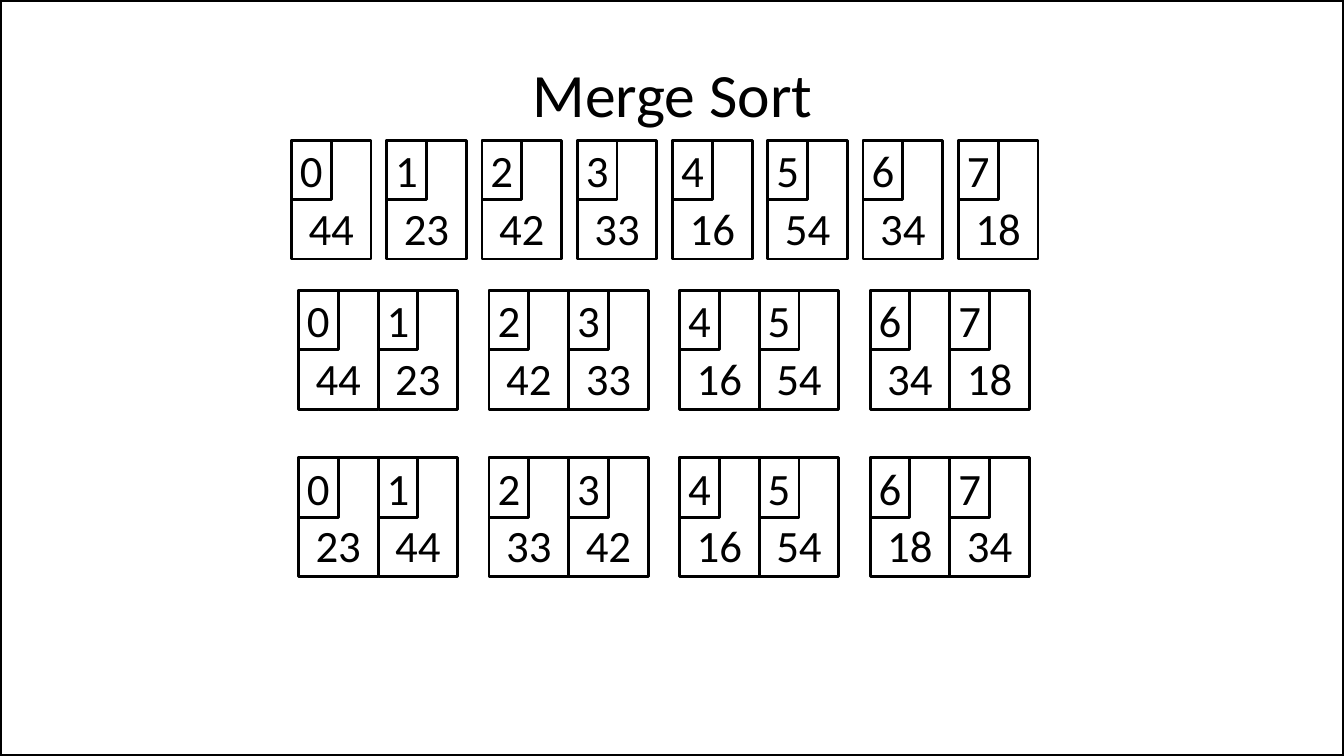
from pptx import Presentation
from pptx.dml.color import RGBColor
from pptx.enum.shapes import MSO_SHAPE
from pptx.enum.text import MSO_ANCHOR, PP_ALIGN
from pptx.util import Inches, Pt

RECTANGLE = MSO_SHAPE.RECTANGLE
MIDDLE = MSO_ANCHOR.MIDDLE
BOTTOM = MSO_ANCHOR.BOTTOM
CENTER = PP_ALIGN.CENTER

BLACK = "000000"
FONT = "Calibri"
SLIDE_WIDTH, SLIDE_HEIGHT = 13.33, 7.5
CELL_WIDTH, CELL_HEIGHT = 0.79, 1.18
PAIR_PITCH = 1.89

ROWS = [
    (2.89, 1.39, 1, [44, 23, 42, 33, 16, 54, 34, 18]),
    (2.96, 2.88, 2, [44, 23, 42, 33, 16, 54, 34, 18]),
    (2.96, 4.54, 2, [23, 44, 33, 42, 16, 54, 18, 34]),
]


def color(value):
    return RGBColor.from_string(value)


def write_text(frame, text, size, anchor):
    frame.word_wrap = True
    frame.vertical_anchor = anchor
    para = frame.paragraphs[0]
    para.alignment = CENTER
    span = para.add_run()
    span.text = text
    span.font.name = FONT
    span.font.size = Pt(size)
    span.font.color.rgb = color(BLACK)


def add_box(page, left, top, width, height, weight):
    box = page.shapes.add_shape(
        RECTANGLE, Inches(left), Inches(top), Inches(width), Inches(height)
    )
    box.shadow.inherit = False
    box.fill.background()
    box.line.color.rgb = color(BLACK)
    box.line.width = Pt(weight)
    return box


def add_title(page, left, top, width, height):
    title = page.shapes.title
    title.left, title.top = Inches(left), Inches(top)
    title.width, title.height = Inches(width), Inches(height)
    write_text(title.text_frame, "Merge Sort", 44, MIDDLE)


def add_cell(page, left, top, index, value):
    labels = [
        (CELL_WIDTH, CELL_HEIGHT, value, BOTTOM),
        (CELL_WIDTH / 2, CELL_HEIGHT / 2, index, MIDDLE),
    ]
    for width, height, number, anchor in labels:
        box = add_box(page, left, top, width, height, 2)
        frame = box.text_frame
        frame.margin_left = frame.margin_right = 0
        write_text(frame, str(number), 32, anchor)


def add_array(page, left, top, group_size, values):
    group_pitch = PAIR_PITCH * group_size / 2
    for index, value in enumerate(values):
        group, place = divmod(index, group_size)
        cell_left = left + group * group_pitch + place * CELL_WIDTH
        add_cell(page, cell_left, top, index, value)


def main():
    deck = Presentation()
    deck.slide_width = Inches(SLIDE_WIDTH)
    deck.slide_height = Inches(SLIDE_HEIGHT)
    page = deck.slides.add_slide(deck.slide_layouts.get_by_name("Title Only"))
    add_box(page, 0, 0, SLIDE_WIDTH, SLIDE_HEIGHT, 3)
    add_title(page, 0.67, 0.3, 12, 1.25)
    for left, top, group_size, values in ROWS:
        add_array(page, left, top, group_size, values)
    deck.save("out.pptx")


if __name__ == "__main__":
    main()
